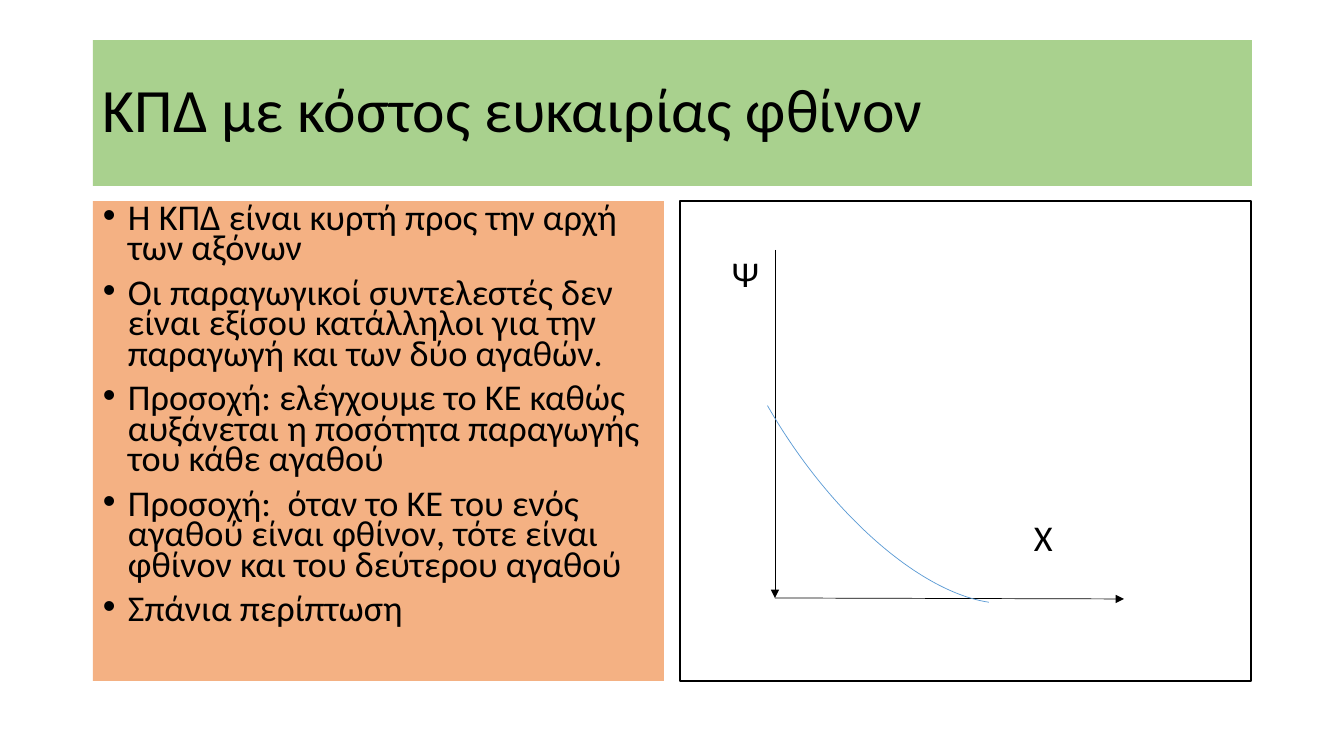
from lxml import etree
from pptx import Presentation
from pptx.dml.color import RGBColor
from pptx.enum.shapes import MSO_CONNECTOR, MSO_SHAPE
from pptx.enum.text import MSO_ANCHOR, MSO_AUTO_SIZE, PP_ALIGN
from pptx.oxml.ns import qn
from pptx.util import Emu, Pt

STRAIGHT = MSO_CONNECTOR.STRAIGHT
ARC = MSO_SHAPE.ARC
TOP, MIDDLE = MSO_ANCHOR.TOP, MSO_ANCHOR.MIDDLE
NO_AUTOFIT = MSO_AUTO_SIZE.NONE
LEFT = PP_ALIGN.LEFT

EMU_PER_PX = 12192000 / 1344
FONT = "Calibri"
BLACK, WHITE, BLUE = "000000", "FFFFFF", "5B9BD5"
GREEN, ORANGE = "A9D18E", "F4B183"
BODY_SIZE, BODY_SPACING = 25.9, 0.7
BULLET_INDENT = 25

TITLE = "ΚΠΔ με κόστος ευκαιρίας φθίνον"
POINTS = [
    "Η ΚΠΔ είναι κυρτή προς την αρχή των αξόνων",
    "Οι παραγωγικοί συντελεστές δεν είναι εξίσου κατάλληλοι για την παραγωγή και των δύο αγαθών.",
    "Προσοχή: ελέγχουμε το ΚΕ καθώς αυξάνεται η ποσότητα παραγωγής του κάθε αγαθού",
    "Προσοχή:  όταν το ΚΕ του ενός αγαθού είναι φθίνον, τότε είναι φθίνον και του δεύτερου αγαθού",
    "Σπάνια περίπτωση",
]
AXIS_LABELS = [("Ψ", 42, 0), ("Χ", 344, 167)]


def px(length):
    """Turn pixels into EMU."""
    return Emu(round(length * EMU_PER_PX))


def colour(value):
    """Turn a hex string into a colour."""
    return RGBColor.from_string(value)


def apply(target, values):
    """Set every attribute named in a dict."""
    for name, value in values.items():
        setattr(target, name, value)


class SlideBuilder:
    """Holds the text style and the current slide."""

    def __init__(self, page):
        """Keep the slide and its shared font."""
        self.page = page
        self.font = {"name": FONT, "bold": False}

    def outline(self, item, line_colour, width):
        """Give a shape or connector a solid line."""
        item.line.color.rgb = colour(line_colour)
        item.line.width = Pt(width)

    def panel(self, index, bounds, fill, anchor=TOP, top_inset=5):
        """Move and fill a template placeholder."""
        box = self.page.placeholders[index]
        apply(box, dict(zip(("left", "top", "width", "height"), map(px, bounds))))
        box.fill.solid()
        box.fill.fore_color.rgb = colour(fill)
        apply(box.text_frame, {
            "word_wrap": True, "auto_size": NO_AUTOFIT, "vertical_anchor": anchor,
            "margin_left": px(10), "margin_right": px(10),
            "margin_top": px(top_inset), "margin_bottom": px(5),
        })
        return box

    def paragraph(self, box, text, size, spacing, before=0, indent=0, bullet=False):
        """Write one paragraph, reusing the empty first one."""
        frame = box.text_frame
        para = frame.add_paragraph() if frame.text else frame.paragraphs[0]
        properties = para._p.get_or_add_pPr()
        properties.set("marL", str(px(indent)))
        properties.set("indent", str(px(-indent if bullet else 0)))
        if bullet:
            etree.SubElement(properties, qn("a:buFont")).set("typeface", "Arial")
            etree.SubElement(properties, qn("a:buChar")).set("char", "•")
        else:
            etree.SubElement(properties, qn("a:buNone"))
        apply(para, {"alignment": LEFT, "line_spacing": spacing,
                     "space_before": Pt(before), "space_after": Pt(0)})
        span = para.add_run()
        span.text = text
        apply(span.font, {**self.font, "size": Pt(size)})
        span.font.color.rgb = colour(BLACK)

    def arrow(self, start, end):
        """Draw a thin axis with an arrowhead at its end."""
        axis = self.page.shapes.add_connector(STRAIGHT, *map(px, start + end))
        self.outline(axis, BLACK, 0.5)
        etree.SubElement(axis.line._get_or_add_ln(), qn("a:tailEnd")).set("type", "triangle")
        etree.SubElement(axis._element.spPr, qn("a:effectLst"))

    def curve(self, bounds, rotation, angles):
        """Draw an unfilled rotated arc."""
        arc = self.page.shapes.add_shape(ARC, *map(px, bounds))
        arc.rotation = rotation
        for index, angle in enumerate(angles):
            arc.adjustments[index] = angle
        arc.fill.background()
        arc.shadow.inherit = False
        self.outline(arc, BLUE, 0.5)


def main():
    """Build and save the slide."""
    deck = Presentation()
    apply(deck, {"slide_width": px(1344), "slide_height": px(756)})
    builder = SlideBuilder(deck.slides.add_slide(deck.slide_layouts[3]))

    title = builder.panel(0, (93, 40, 1159, 146), GREEN, MIDDLE)
    builder.paragraph(title, TITLE, 44, 0.9)

    points = builder.panel(1, (93, 201, 571, 480), ORANGE)
    for number, text in enumerate(POINTS):
        builder.paragraph(points, text, BODY_SIZE, BODY_SPACING,
                          10 if number else 0, BULLET_INDENT, True)

    graph = builder.panel(2, (680, 201, 571, 480), WHITE, top_inset=62)
    builder.outline(graph, BLACK, 1)
    for text, indent, before in AXIS_LABELS:
        builder.paragraph(graph, text, BODY_SIZE, BODY_SPACING, before, indent)

    origin = (775, 598)
    builder.arrow((775, 250), origin)
    builder.arrow(origin, (1124, 599))
    builder.curve((763, 87, 259, 550), 147.1, (168.63, 8.2))

    deck.save("out.pptx")


if __name__ == "__main__":
    main()
